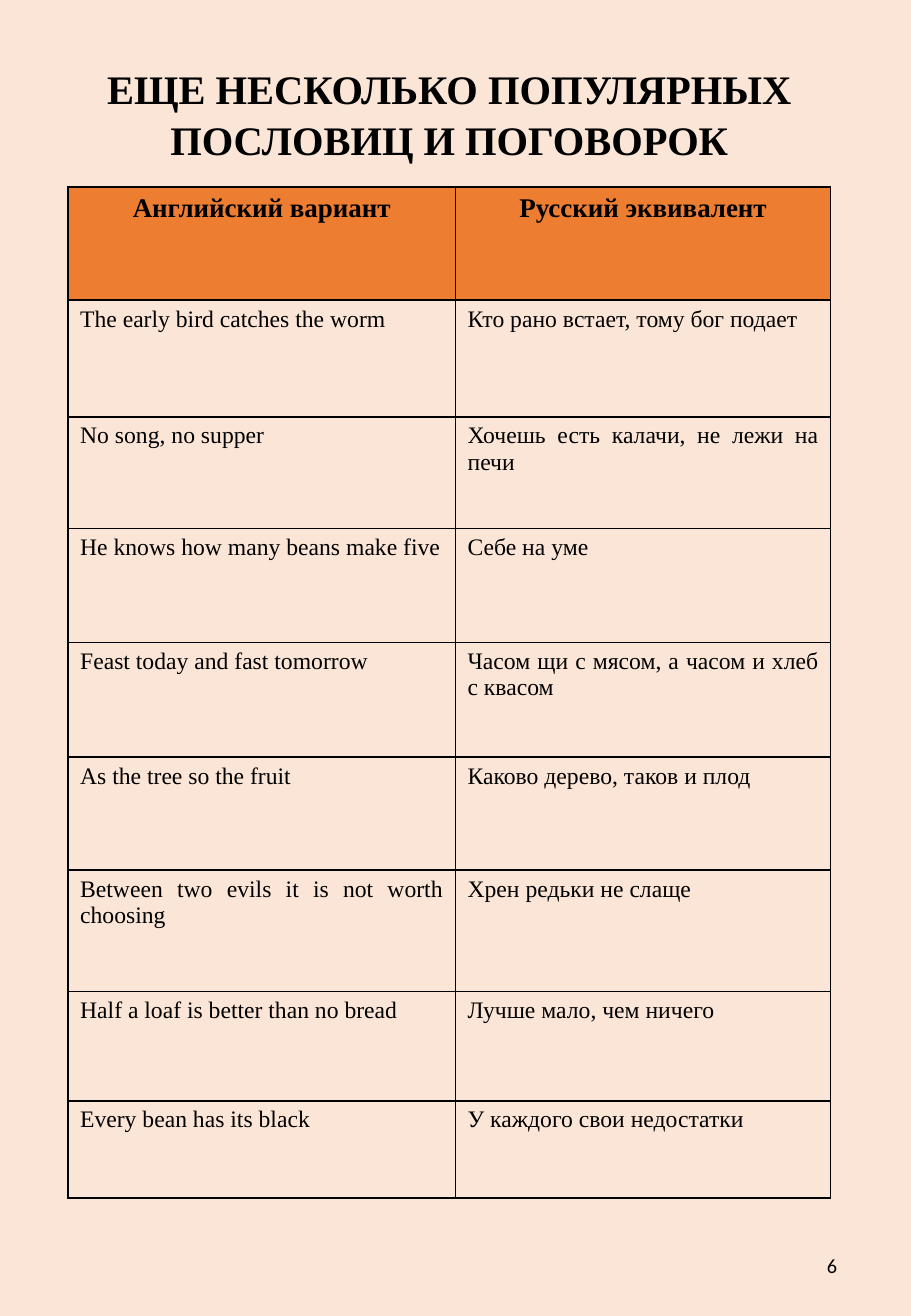
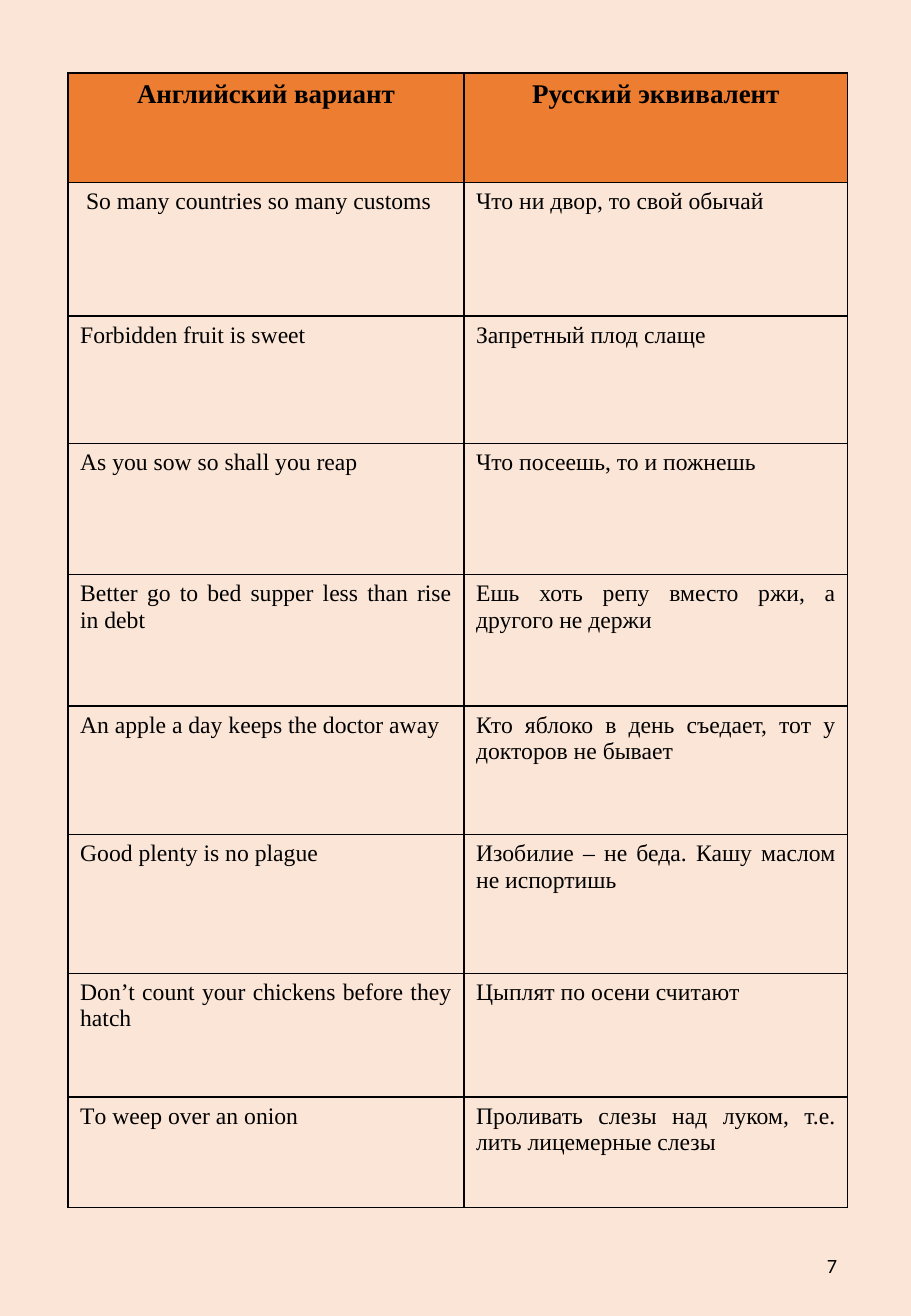
from lxml.etree import SubElement
from pptx import Presentation
from pptx.dml.color import RGBColor
from pptx.enum.text import MSO_ANCHOR, PP_ALIGN
from pptx.oxml.ns import qn
from pptx.util import Inches, Pt

COLORS = {"page": "FBE5D6", "header": "ED7D31", "ink": "000000"}
SERIF, SANS = "Times New Roman", "Calibri"
SLIDE_WIDTH, SLIDE_HEIGHT = 7.5, 10.83
LEFT = 0.56
TITLE_LAYOUT, BLANK_LAYOUT = 5, 6
HEADINGS = ("Английский вариант", "Русский эквивалент")

PAGES = [
    {
        "number": 6,
        "title": "ЕЩЕ НЕСКОЛЬКО ПОПУЛЯРНЫХ\nПОСЛОВИЦ И ПОГОВОРОК",
        "top": 1.54,
        "columns": (3.19, 3.09),
        "rows": (0.93, 0.96, 0.92, 0.94, 0.94, 0.93, 1, 0.9, 0.8),
        "proverbs": [
            ("The early bird catches the worm", "Кто рано встает, тому бог подает"),
            ("No song, no supper", "Хочешь есть калачи, не лежи на печи"),
            ("He knows how many beans make five", "Себе на уме"),
            ("Feast today and fast tomorrow", "Часом щи с мясом, а часом и хлеб с квасом"),
            ("As the tree so the fruit", "Каково дерево, таков и плод"),
            ("Between two evils it is not worth choosing", "Хрен редьки не слаще"),
            ("Half a loaf is better than no bread", "Лучше мало, чем ничего"),
            ("Every bean has its black", "У каждого свои недостатки"),
        ],
    },
    {
        "number": 7,
        "title": None,
        "top": 0.6,
        "columns": (3.26, 3.16),
        "rows": (0.9, 1.1, 1.05, 1.08, 1.08, 1.06, 1.14, 1.02, 0.91),
        "proverbs": [
            (" So many countries so many customs", "Что ни двор, то свой обычай"),
            ("Forbidden fruit is sweet", "Запретный плод слаще"),
            ("As you sow so shall you reap", "Что посеешь, то и пожнешь"),
            ("Better go to bed supper less than rise in debt",
             "Ешь хоть репу вместо ржи, а другого не держи"),
            ("An apple a day keeps the doctor away",
             "Кто яблоко в день съедает, тот у докторов не бывает"),
            ("Good рlenty is no plague", "Изобилие – не беда. Кашу маслом не испортишь"),
            ("Don’t count your chickens before they hatch", "Цыплят по осени считают"),
            ("Tо weep over an onion", "Проливать слезы над луком, т.е. лить лицемерные слезы"),
        ],
    },
]


def write(text_frame, text, size, alignment, font=SERIF, bold=False, spacing=1.0):
    """Fill a text frame and format all its paragraphs alike."""
    text_frame.text = text
    text_frame.word_wrap = True
    for paragraph in text_frame.paragraphs:
        paragraph.alignment = alignment
        paragraph.line_spacing = spacing
        paragraph.space_before = Pt(0)
        for run in paragraph.runs:
            run.font.name = font
            run.font.size = Pt(size)
            run.font.bold = bold
            run.font.color.rgb = RGBColor.from_string(COLORS["ink"])


def add_borders(cell):
    """Draw a one-point line on every side of a cell."""
    properties = cell._tc.get_or_add_tcPr()
    for position, side in enumerate(("a:lnL", "a:lnR", "a:lnT", "a:lnB")):
        line = SubElement(properties, qn(side), w=str(Pt(1)))
        fill = SubElement(line, qn("a:solidFill"))
        SubElement(fill, qn("a:srgbClr"), val=COLORS["ink"])
        properties.insert(position, line)


def add_title(slide, text, width):
    """Place the heading over the table."""
    title = slide.shapes.title
    title.left, title.top = Inches(LEFT), Inches(0.46)
    title.width, title.height = Inches(width), Inches(0.91)
    title.text_frame.vertical_anchor = MSO_ANCHOR.TOP
    write(title.text_frame, text, 24, PP_ALIGN.CENTER, bold=True, spacing=1.05)


def add_proverbs(slide, page):
    """Add the two-column table of proverbs."""
    contents = [HEADINGS] + page["proverbs"]
    table = slide.shapes.add_table(
        len(contents), len(HEADINGS), Inches(LEFT), Inches(page["top"]),
        Inches(sum(page["columns"])), Inches(sum(page["rows"]))).table
    table.horz_banding = False
    for column, width in zip(table.columns, page["columns"]):
        column.width = Inches(width)
    for row_index, (row, height) in enumerate(zip(table.rows, page["rows"])):
        row.height = Inches(height)
        is_header = row_index == 0
        for cell, text in zip(row.cells, contents[row_index]):
            if is_header:
                cell.fill.solid()
                cell.fill.fore_color.rgb = RGBColor.from_string(COLORS["header"])
                write(cell.text_frame, text, 16, PP_ALIGN.CENTER, bold=True)
            else:
                cell.fill.background()
                write(cell.text_frame, text, 14, PP_ALIGN.JUSTIFY)
            add_borders(cell)


def add_page_number(slide, number):
    """Put the page number in the lower right corner."""
    box = slide.shapes.add_textbox(Inches(6.67), Inches(10.2), Inches(0.32), Inches(0.42))
    box.text_frame.vertical_anchor = MSO_ANCHOR.MIDDLE
    write(box.text_frame, str(number), 12, PP_ALIGN.RIGHT, font=SANS)


def main():
    """Build and save the presentation."""
    presentation = Presentation()
    presentation.slide_width = Inches(SLIDE_WIDTH)
    presentation.slide_height = Inches(SLIDE_HEIGHT)
    background = presentation.slide_master.background.fill
    background.solid()
    background.fore_color.rgb = RGBColor.from_string(COLORS["page"])
    for page in PAGES:
        layout = TITLE_LAYOUT if page["title"] else BLANK_LAYOUT
        slide = presentation.slides.add_slide(presentation.slide_layouts[layout])
        if page["title"]:
            add_title(slide, page["title"], sum(page["columns"]))
        add_proverbs(slide, page)
        add_page_number(slide, page["number"])
    presentation.save("out.pptx")


if __name__ == "__main__":
    main()
